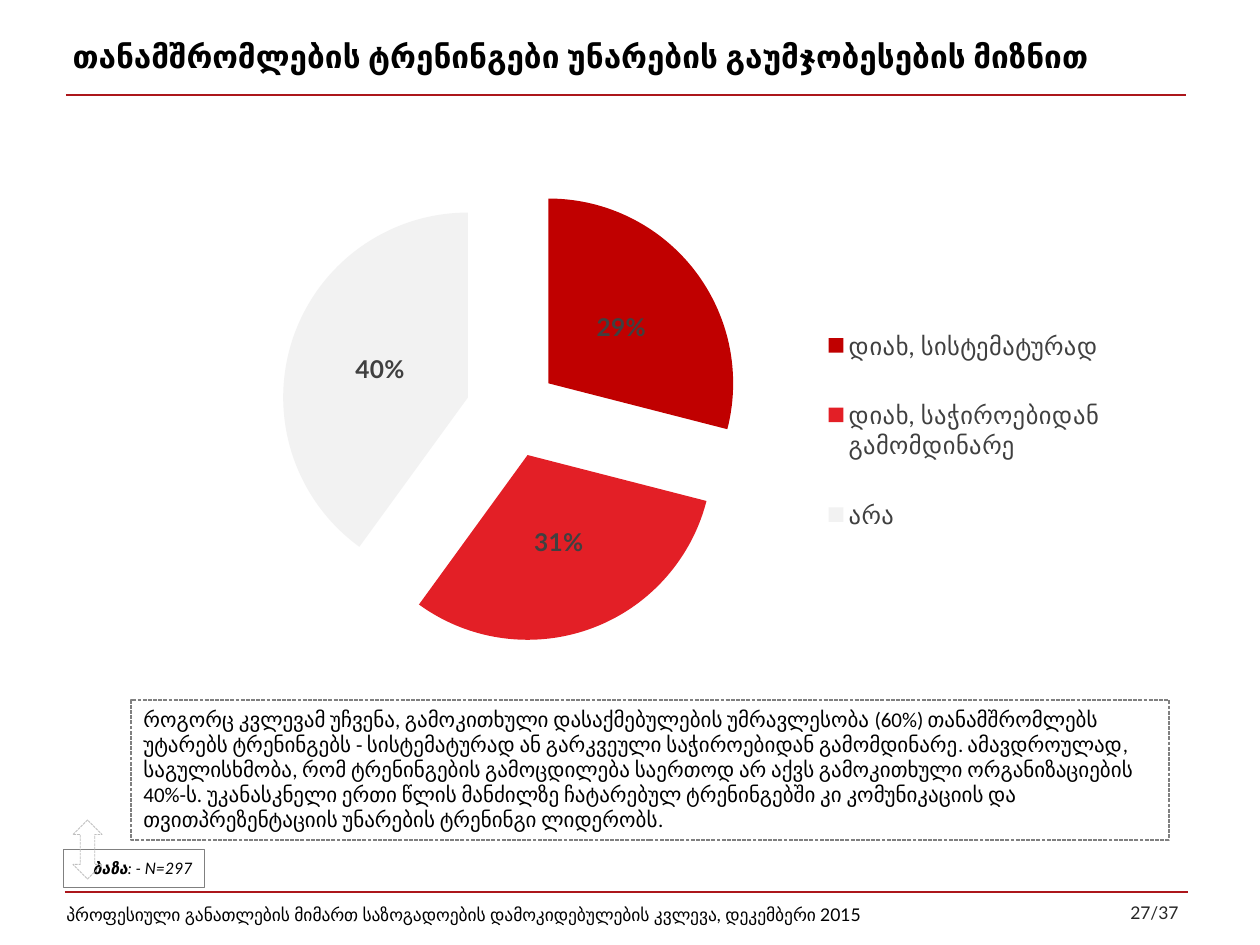
"""Builds the survey slide on staff training."""
from lxml import etree
from pptx import Presentation, util as u
from pptx.chart import data as chart_data
from pptx.dml import color
from pptx.enum import chart as charts, dml, shapes, text
from pptx.oxml import ns

EMU_PER_PX = 914400 / 126
COLORS = {
    "rule": "AC161B", "ink": "000000", "page": "262626", "label": "404040",
    "border": "808080", "arrow": "BFBFBF",
    "always": "C00000", "needed": "E31F26", "never": "F2F2F2",
}
ANSWERS = [
    ("დიახ, სისტემატურად", 0.29, "always"),
    ("დიახ, საჭიროებიდან გამომდინარე", 0.31, "needed"),
    ("არა", 0.4, "never"),
]
TITLE = "თანამშრომლების ტრენინგები უნარების გაუმჯობესების მიზნით"
FOOTER = "პროფესიული განათლების მიმართ საზოგადოების დამოკიდებულების კვლევა, დეკემბერი 2015"
FINDINGS = (
    "როგორც კვლევამ უჩვენა, გამოკითხული დასაქმებულების უმრავლესობა (60%) თანამშრომლებს "
    "უტარებს ტრენინგებს - სისტემატურად ან გარკვეული საჭიროებიდან გამომდინარე. ამავდროულად, "
    "საგულისხმობა, რომ ტრენინგების გამოცდილება საერთოდ არ აქვს გამოკითხული ორგანიზაციების "
    "40%-ს. უკანასკნელი ერთი წლის მანძილზე ჩატარებულ ტრენინგებში კი კომუნიკაციის და "
    "თვითპრეზენტაციის უნარების ტრენინგი ლიდერობს."
)


def px(*lengths):
    """Turn pixel lengths into EMU."""
    return [u.Emu(round(length * EMU_PER_PX)) for length in lengths]


def rgb(name):
    """Look up a named colour."""
    return color.RGBColor.from_string(COLORS[name])


def style_font(font, size, ink="ink", face="Lato", bold=False, italic=False):
    """Set the face, size, colour and weight of a font."""
    font.name, font.size, font.bold, font.italic = face, u.Pt(size), bold, italic
    font.color.rgb = rgb(ink)


def write(shape, runs, align=text.PP_ALIGN.LEFT, anchor=text.MSO_ANCHOR.MIDDLE):
    """Fill a shape with one paragraph of (words, font settings) runs."""
    frame = shape.text_frame
    frame.word_wrap = True
    frame.auto_size = text.MSO_AUTO_SIZE.NONE
    frame.vertical_anchor = anchor
    para = frame.paragraphs[0]
    para.alignment = align
    for words, settings in runs:
        span = para.add_run()
        span.text = words
        style_font(span.font, **settings)


def add_rule(slide, left, top, width):
    """Draw a thin horizontal rule."""
    rule = slide.shapes.add_connector(
        shapes.MSO_CONNECTOR.STRAIGHT, *px(left, top, left + width, top))
    rule.line.color.rgb = rgb("rule")
    rule.line.width = u.Pt(0.75)
    etree.SubElement(rule.element.spPr, ns.qn("a:effectLst"))


def add_outline(slide, kind, box, ink, weight, dash=None):
    """Draw an unfilled outlined shape."""
    shape = slide.shapes.add_shape(kind, *px(*box))
    shape.shadow.inherit = False
    shape.fill.background()
    shape.line.color.rgb = rgb(ink)
    shape.line.width = u.Pt(weight)
    if dash:
        shape.line.dash_style = dash
    return shape


def add_header(slide, left, top, width, height):
    """Place the title and the rule below it."""
    title = slide.shapes.title
    title.left, title.top, title.width, title.height = px(left, top, width, height)
    write(title, [(TITLE, dict(size=18, bold=True))])
    add_rule(slide, left + 6, top + 69, 1120)


def add_footer(slide, left, top, width, height):
    """Place the rule, survey name and page number."""
    add_rule(slide, left + 11, top + 2, 1123)
    survey = slide.shapes.add_textbox(*px(left, top, 883, height))
    write(survey, [(FOOTER, dict(size=10))])
    number = slide.shapes.add_textbox(*px(left + width - 193, top - 2, 193, height))
    write(number, [("27/37", dict(size=10, ink="page"))], text.PP_ALIGN.RIGHT)


def add_notes_area(slide, left, top, width, height):
    """Place the sample size, the arrow and the findings."""
    dash = dml.MSO_LINE.SQUARE_DOT
    rectangle = shapes.MSO_SHAPE.RECTANGLE
    sample = add_outline(slide, rectangle, (left, top + 149, 141, 39), "border", 0.5)
    base = dict(size=9, italic=True)
    write(sample, [("ბაზა", dict(base, bold=True)), (": - N=297", base)],
          text.PP_ALIGN.RIGHT)
    add_outline(slide, shapes.MSO_SHAPE.UP_DOWN_ARROW,
                (left + 9, top + 120, 29, 59), "arrow", 0.5, dash)
    findings = add_outline(slide, rectangle, (left + 67, top, width - 67, height),
                           "border", 0.75, dash)
    write(findings, [(FINDINGS, dict(size=12, face="Calibri"))],
          anchor=text.MSO_ANCHOR.TOP)


def set_layout(element, before, inner=False, **fractions):
    """Fix the place of a chart part as fractions of the chart."""
    for old in element.findall(ns.qn("c:layout")):
        element.remove(old)
    layout = etree.Element(ns.qn("c:layout"))
    manual = etree.SubElement(layout, ns.qn("c:manualLayout"))
    settings = {"layoutTarget": "inner"} if inner else {}
    settings.update(xMode="edge", yMode="edge")
    settings.update(fractions)
    for tag, value in settings.items():
        etree.SubElement(manual, ns.qn(f"c:{tag}")).set("val", str(value))
    element.find(ns.qn(before)).addprevious(layout)


def add_pie(slide, left, top, width, height):
    """Place the exploded pie of answers with its legend."""
    data = chart_data.CategoryChartData(number_format="0%")
    data.categories = [answer for answer, _, _ in ANSWERS]
    data.add_series("Series 1", [share for _, share, _ in ANSWERS])
    chart = slide.shapes.add_chart(
        charts.XL_CHART_TYPE.PIE, *px(left, top, width, height), data).chart
    style_font(chart.font, 18, face="Calibri")
    chart.has_title = False
    chart.has_legend = True
    chart.legend.position = charts.XL_LEGEND_POSITION.RIGHT
    chart.legend.include_in_layout = False
    style_font(chart.legend.font, 14, "label")

    plot = chart.plots[0]
    plot.vary_by_categories = True
    series = plot.series[0]
    for index, (_, _, ink) in enumerate(ANSWERS):
        fill = series.points[index].format.fill
        fill.solid()
        fill.fore_color.rgb = rgb(ink)
    explosion = etree.Element(ns.qn("c:explosion"))
    explosion.set("val", "25")
    series._element.find(ns.qn("c:dPt")).addprevious(explosion)

    plot.has_data_labels = True
    labels = plot.data_labels
    labels.show_value, labels.show_percentage = True, False
    labels.number_format, labels.number_format_is_linked = "0%", False
    labels.position = charts.XL_LABEL_POSITION.CENTER
    style_font(labels.font, 14, "label", bold=True)

    area = chart._chartSpace.chart.plotArea
    set_layout(area, "c:pieChart", inner=True, x=0.11, y=0.03, w=0.49, h=0.88)
    set_layout(chart.legend._element, "c:overlay", x=0.68, y=0.24, w=0.3, h=0.53)


def main():
    """Build and save the deck."""
    deck = Presentation()
    deck.slide_width, deck.slide_height = px(1260, 945)
    slide = deck.slides.add_slide(deck.slide_layouts[5])
    add_header(slide, 60, 26, 1145, 59)
    add_footer(slide, 54, 890, 1137, 50)
    add_notes_area(slide, 64, 700, 1105, 140)
    add_pie(slide, 174, 165, 952, 525)
    deck.save("out.pptx")


if __name__ == "__main__":
    main()
